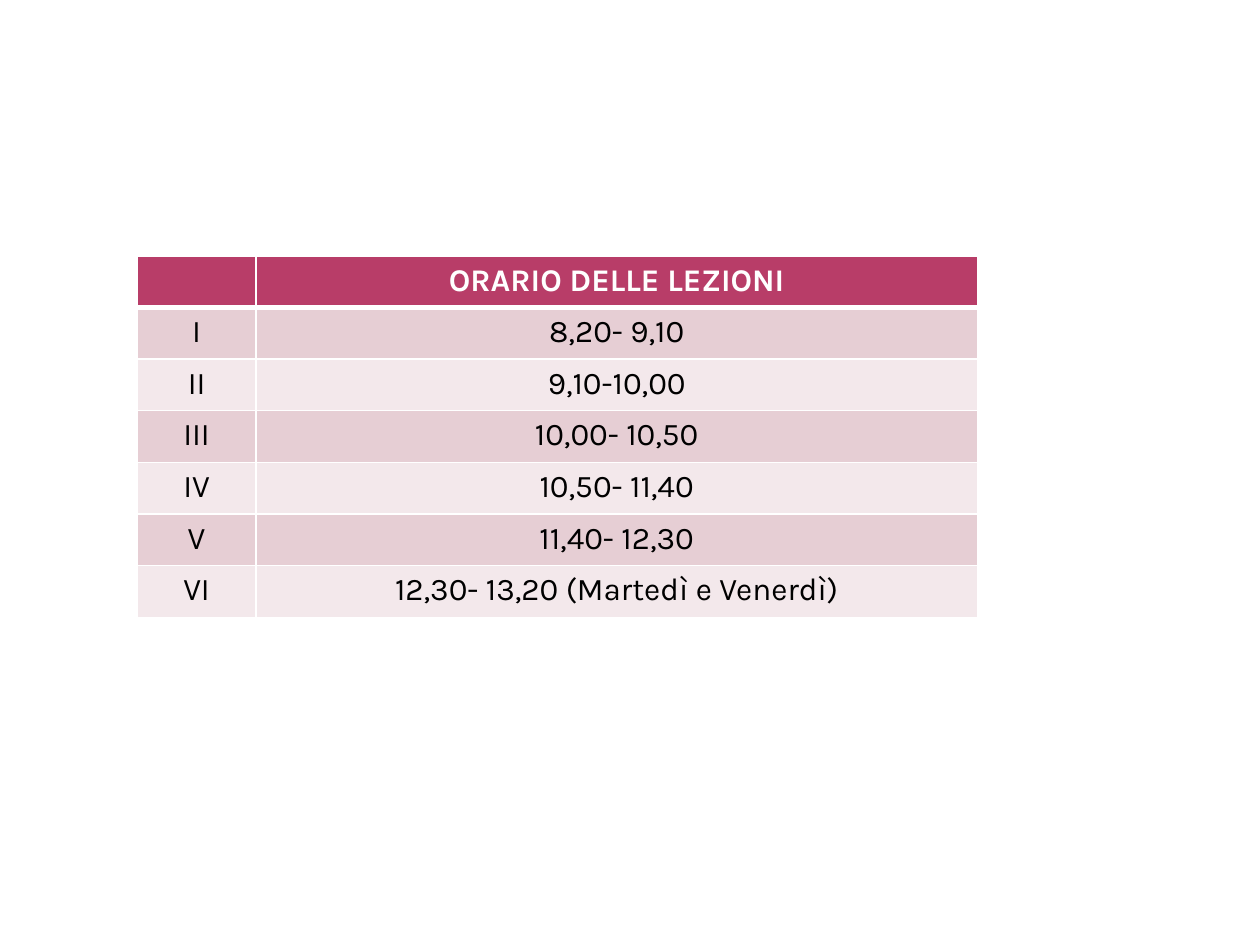
from dataclasses import dataclass
from typing import NamedTuple

from lxml import etree
from pptx import Presentation, util as u
from pptx.dml.color import RGBColor
from pptx.enum import text
from pptx.oxml import ns


@dataclass(frozen=True)
class Theme:
    font: str = "Karla"
    size: int = 18
    header: str = "B83D68"
    bands: tuple[str, str] = ("E6CED4", "F3E8EB")
    light: str = "FFFFFF"
    dark: str = "000000"
    rule: int = 1
    header_rule: int = 3


class Lesson(NamedTuple):
    number: str
    hours: str


THEME = Theme()
SLIDE_W, SLIDE_H = u.Inches(10), u.Inches(7.5)
LEFT, TOP = 1.09, 2.03
COL_WIDTHS = (0.94, 5.73)
ROW_HEIGHT = 0.41

ROWS = (
    Lesson("", "ORARIO DELLE LEZIONI"),
    Lesson("I", "8,20- 9,10"),
    Lesson("II", "9,10-10,00"),
    Lesson("III", "10,00- 10,50"),
    Lesson("IV", "10,50- 11,40"),
    Lesson("V", "11,40- 12,30"),
    Lesson("VI", "12,30- 13,20 (Martedì e Venerdì)"),
)


def set_borders(cell, top: int, bottom: int) -> None:
    """Draw the four cell borders; widths are in points."""
    tc_pr = cell._tc.get_or_add_tcPr()
    widths = {"lnL": THEME.rule, "lnR": THEME.rule, "lnT": top, "lnB": bottom}
    for i, (tag, width) in enumerate(widths.items()):
        ln = etree.Element(ns.qn(f"a:{tag}"), w=str(u.Pt(width)))
        fill = etree.SubElement(ln, ns.qn("a:solidFill"))
        etree.SubElement(fill, ns.qn("a:srgbClr"), val=THEME.light)
        tc_pr.insert(i, ln)


def format_cell(cell, row: int, label: str) -> None:
    is_header = row == 0
    color = THEME.header if is_header else THEME.bands[(row - 1) % 2]
    cell.fill.solid()
    cell.fill.fore_color.rgb = RGBColor.from_string(color)
    set_borders(cell,
                top=THEME.header_rule if row == 1 else THEME.rule,
                bottom=THEME.header_rule if is_header else THEME.rule)
    if not label:
        return
    p = cell.text_frame.paragraphs[0]
    p.alignment = text.PP_ALIGN.CENTER
    r = p.add_run()
    r.text = label
    r.font.name = THEME.font
    r.font.size = u.Pt(THEME.size)
    r.font.bold = is_header
    r.font.color.rgb = RGBColor.from_string(THEME.light if is_header else THEME.dark)


def add_timetable(s, rows: tuple[Lesson, ...]) -> None:
    table = s.shapes.add_table(
        len(rows), len(COL_WIDTHS), u.Inches(LEFT), u.Inches(TOP),
        u.Inches(sum(COL_WIDTHS)), u.Inches(ROW_HEIGHT * len(rows))).table
    for column, width in zip(table.columns, COL_WIDTHS):
        column.width = u.Inches(width)
    for i, lesson in enumerate(rows):
        table.rows[i].height = u.Inches(ROW_HEIGHT)
        for j, label in enumerate(lesson):
            format_cell(table.cell(i, j), i, label)


def main() -> None:
    prs = Presentation()
    prs.slide_width, prs.slide_height = SLIDE_W, SLIDE_H
    s = prs.slides.add_slide(prs.slide_layouts[6])
    add_timetable(s, ROWS)
    prs.save("out.pptx")


if __name__ == "__main__":
    main()
